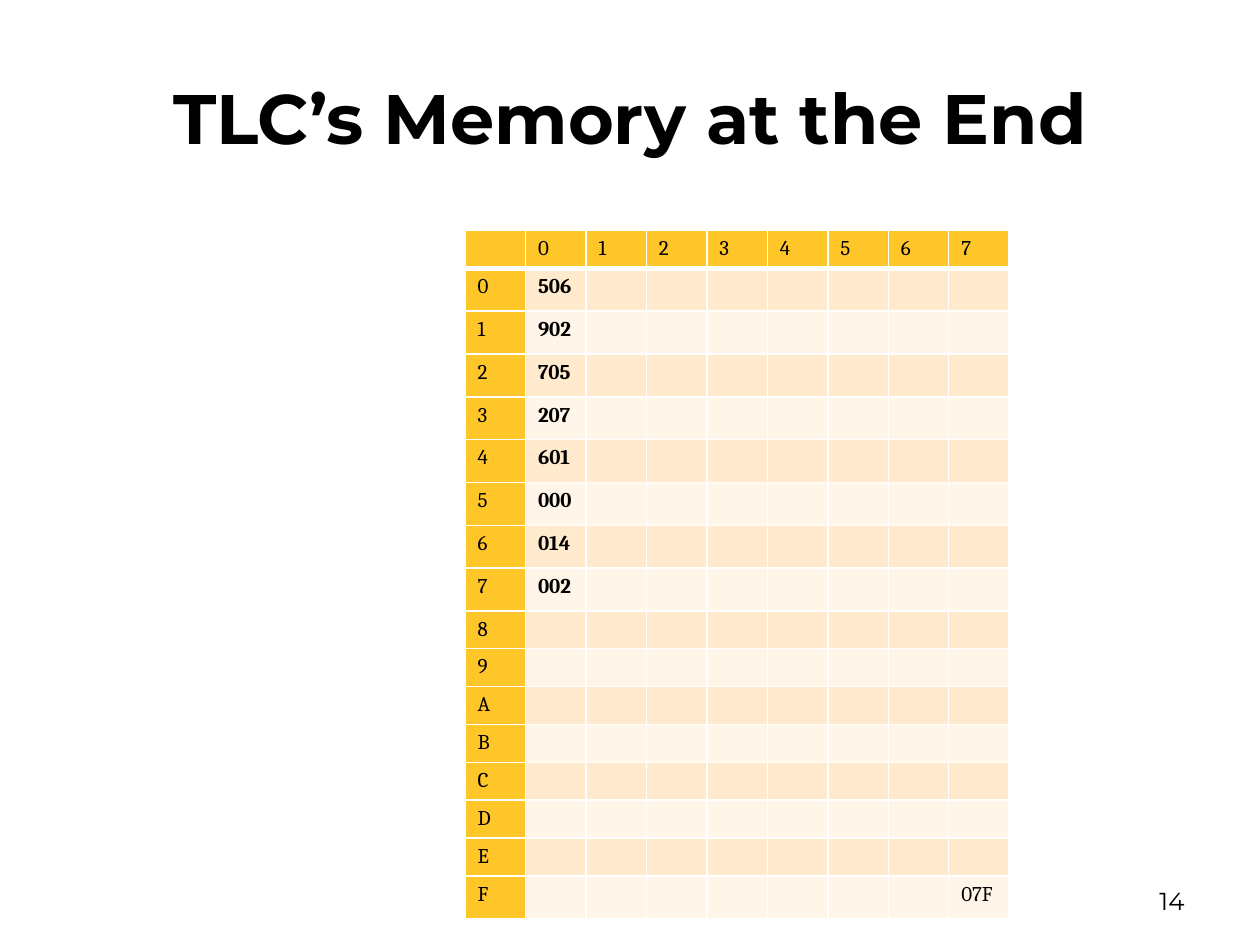
import pptx
import pptx.dml.color
import pptx.enum.text
import pptx.oxml.ns
import pptx.util
from lxml import etree

TITLE = "TLC’s Memory at the End"
PAGE_NUMBER = "14"
COLUMN_LABELS = "01234567"
ROW_LABELS = "0123456789ABCDEF"
MEMORY = {
    "00": "506", "10": "902", "20": "705", "30": "207",
    "40": "601", "50": "000", "60": "014", "70": "002",
    "F7": "07F",
}
PLAIN_VALUES = {"07F"}

SLIDE_WIDTH, SLIDE_HEIGHT = 10, 7.5
TABLE_LEFT, TABLE_TOP = 3.69, 1.83
COLUMN_WIDTH = 0.48
HEADER_HEIGHT, FILLED_HEIGHT, EMPTY_HEIGHT = 0.28, 0.34, 0.29
HEADING_FILL = "FFC629"
BAND_FILLS = ("FFEACD", "FFF5E8")
BLACK, WHITE = "000000", "FFFFFF"
TABLE_FONT, TEXT_FONT = "Cambria", "Montserrat"
CELL_SIZE = 12


def color(value):
    """Turn a hex string into a colour."""
    return pptx.dml.color.RGBColor.from_string(value)


def add_run(paragraph, text, font_name, size, bold=False):
    """Add one black run to a paragraph."""
    run = paragraph.add_run()
    run.text = text
    run.font.name = font_name
    run.font.size = pptx.util.Pt(size)
    run.font.bold = bold
    run.font.color.rgb = color(BLACK)


def add_text(slide, text, box, alignment, size, bold=False):
    """Add a vertically centred line of text in a box given in inches."""
    shape = slide.shapes.add_textbox(*map(pptx.util.Inches, box))
    frame = shape.text_frame
    frame.word_wrap = True
    frame.vertical_anchor = pptx.enum.text.MSO_ANCHOR.MIDDLE
    paragraph = frame.paragraphs[0]
    paragraph.alignment = alignment
    add_run(paragraph, text, TEXT_FONT, size, bold)


def set_borders(cell, widths):
    """Draw white cell borders from widths in points keyed by side."""
    properties = cell._tc.get_or_add_tcPr()
    for side in "LRTB":
        line = etree.SubElement(
            properties, pptx.oxml.ns.qn(f"a:ln{side}"), w=str(pptx.util.Pt(widths.get(side, 1)))
        )
        fill = etree.SubElement(line, pptx.oxml.ns.qn("a:solidFill"))
        etree.SubElement(fill, pptx.oxml.ns.qn("a:srgbClr"), val=WHITE)


def fill_cell(cell, text, fill, borders):
    """Set the borders, fill and text of a table cell."""
    set_borders(cell, borders)
    cell.fill.solid()
    cell.fill.fore_color.rgb = color(fill)
    paragraph = cell.text_frame.paragraphs[0]
    if text:
        bold = text in MEMORY.values() and text not in PLAIN_VALUES
        add_run(paragraph, text, TABLE_FONT, CELL_SIZE, bold)
    else:
        end = etree.SubElement(
            paragraph._p, pptx.oxml.ns.qn("a:endParaRPr"), sz=str(CELL_SIZE * 100)
        )
        etree.SubElement(end, pptx.oxml.ns.qn("a:latin"), typeface=TABLE_FONT)


def add_memory_table(slide):
    """Add the memory grid with its row and column headings."""
    grid = [["", *COLUMN_LABELS]]
    heights = [HEADER_HEIGHT]
    for label in ROW_LABELS:
        values = [MEMORY.get(label + column, "") for column in COLUMN_LABELS]
        grid.append([label, *values])
        heights.append(FILLED_HEIGHT if any(values) else EMPTY_HEIGHT)
    box = (TABLE_LEFT, TABLE_TOP, COLUMN_WIDTH * len(grid[0]), sum(heights))
    table = slide.shapes.add_table(
        len(grid), len(grid[0]), *map(pptx.util.Inches, box)
    ).table
    for column in table.columns:
        column.width = pptx.util.Inches(COLUMN_WIDTH)
    for row_index, (texts, height) in enumerate(zip(grid, heights)):
        table.rows[row_index].height = pptx.util.Inches(height)
        borders = {0: {"B": 3}, 1: {"T": 3}}.get(row_index, {})
        for column_index, text in enumerate(texts):
            heading = row_index == 0 or column_index == 0
            fill = HEADING_FILL if heading else BAND_FILLS[(row_index - 1) % 2]
            fill_cell(table.cell(row_index, column_index), text, fill, borders)


def main():
    """Build and save the slide."""
    presentation = pptx.Presentation()
    presentation.slide_width = pptx.util.Inches(SLIDE_WIDTH)
    presentation.slide_height = pptx.util.Inches(SLIDE_HEIGHT)
    slide = presentation.slides.add_slide(presentation.slide_layouts[6])
    align = pptx.enum.text.PP_ALIGN
    add_text(slide, TITLE, (0.5, 0.3, 9, 1.25), align.CENTER, 40, bold=True)
    add_text(slide, PAGE_NUMBER, (7.17, 6.95, 2.33, 0.4), align.RIGHT, 14)
    add_memory_table(slide)
    presentation.save("out.pptx")


if __name__ == "__main__":
    main()
